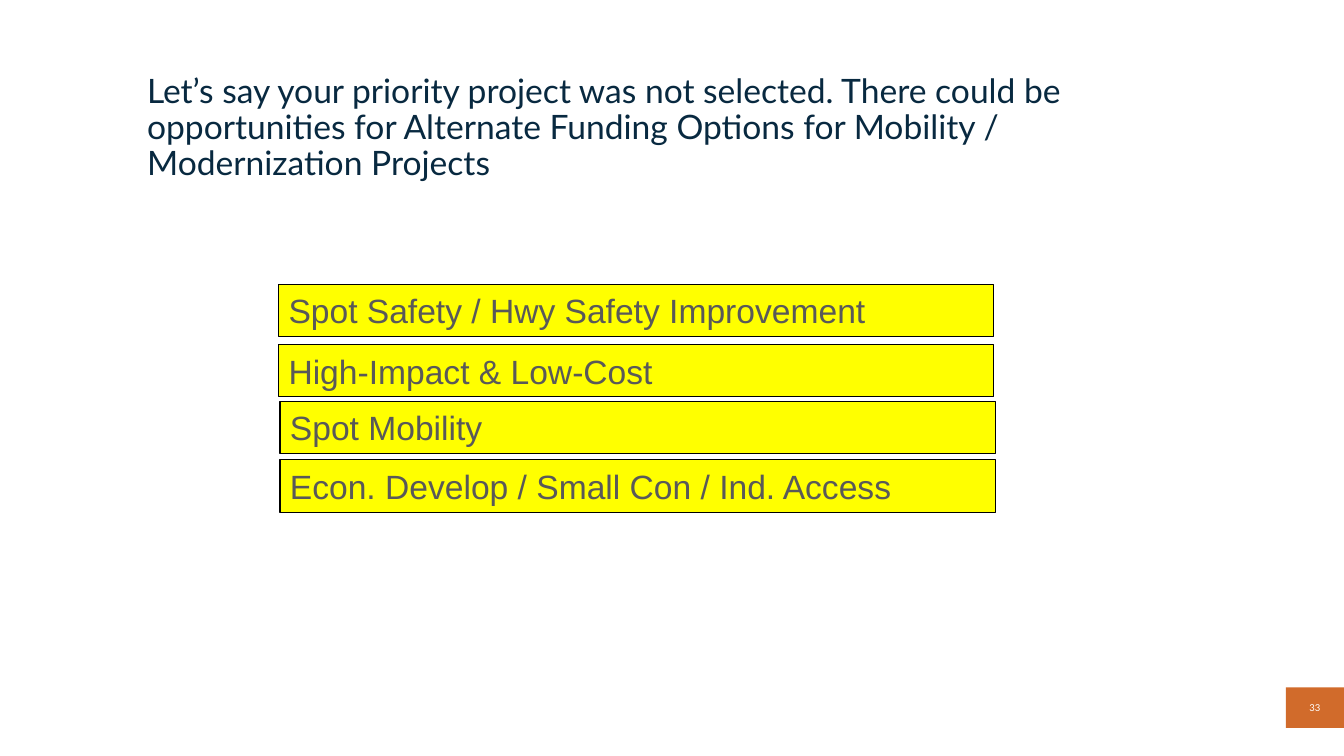
from dataclasses import dataclass
from typing import Optional

from pptx import Presentation
from pptx import util as u
from pptx.dml.color import RGBColor
from pptx.enum import shapes, text

NAVY = RGBColor(0x08, 0x29, 0x40)
ORANGE = RGBColor(0xD1, 0x6B, 0x2B)
YELLOW = RGBColor(0xFF, 0xFF, 0x00)
GREY = RGBColor(0x59, 0x59, 0x59)
BLACK = RGBColor(0, 0, 0)
WHITE = RGBColor(0xFF, 0xFF, 0xFF)


@dataclass
class Label:
    words: str
    left: float
    top: float
    width: float
    height: float
    font: str
    size: float
    color: RGBColor
    fill: Optional[RGBColor] = None
    line: Optional[RGBColor] = None
    align: text.PP_ALIGN = text.PP_ALIGN.LEFT
    space: float = 1.0


def style(item: object, values: dict) -> None:
    for key, value in values.items():
        setattr(item, key, value)


def draw(slide, label: Label) -> None:
    place = [u.Pt(n) for n in (label.left, label.top, label.width, label.height)]
    if label.fill is None:
        shape = slide.shapes.add_textbox(*place)
    else:
        shape = slide.shapes.add_shape(shapes.MSO_SHAPE.RECTANGLE, *place)
        shape.shadow.inherit = False
        shape.fill.solid()
        shape.fill.fore_color.rgb = label.fill
        if label.line is None:
            shape.line.fill.background()
        else:
            shape.line.color.rgb = label.line
            shape.line.width = u.Pt(0.75)

    frame = shape.text_frame
    style(frame, {"word_wrap": True, "vertical_anchor": text.MSO_ANCHOR.MIDDLE})
    para = frame.paragraphs[0]
    style(para, {"alignment": label.align, "line_spacing": label.space})
    run = para.add_run()
    run.text = label.words
    style(run.font, {"name": label.font, "size": u.Pt(label.size)})
    run.font.color.rgb = label.color


def main() -> None:
    deck = Presentation()
    style(deck, {"slide_width": u.Pt(960), "slide_height": u.Pt(540)})
    slide = deck.slides.add_slide(deck.slide_layouts[6])

    # Title
    draw(slide, Label(
        "Let’s say your priority project was not selected. There could be "
        "opportunities for Alternate Funding Options for Mobility / "
        "Modernization Projects",
        98, 56, 684, 72, "Lato", 24, NAVY, space=0.9))

    # Funding options
    options = [
        ("Spot Safety / Hwy Safety Improvement", 199, 203),
        ("High-Impact & Low-Cost", 199, 246),
        ("Spot Mobility", 200, 286.5),
        ("Econ. Develop / Small Con / Ind. Access", 200, 328.3),
    ]
    for words, left, top in options:
        draw(slide, Label(words, left, top, 511, 37.6, "Arial", 24, GREY,
                          YELLOW, BLACK))

    # Page number
    draw(slide, Label("33", 918.5, 491, 41.5, 29, "Lato", 6.8, WHITE, ORANGE,
                      align=text.PP_ALIGN.CENTER))

    deck.save("out.pptx")


if __name__ == "__main__":
    main()
